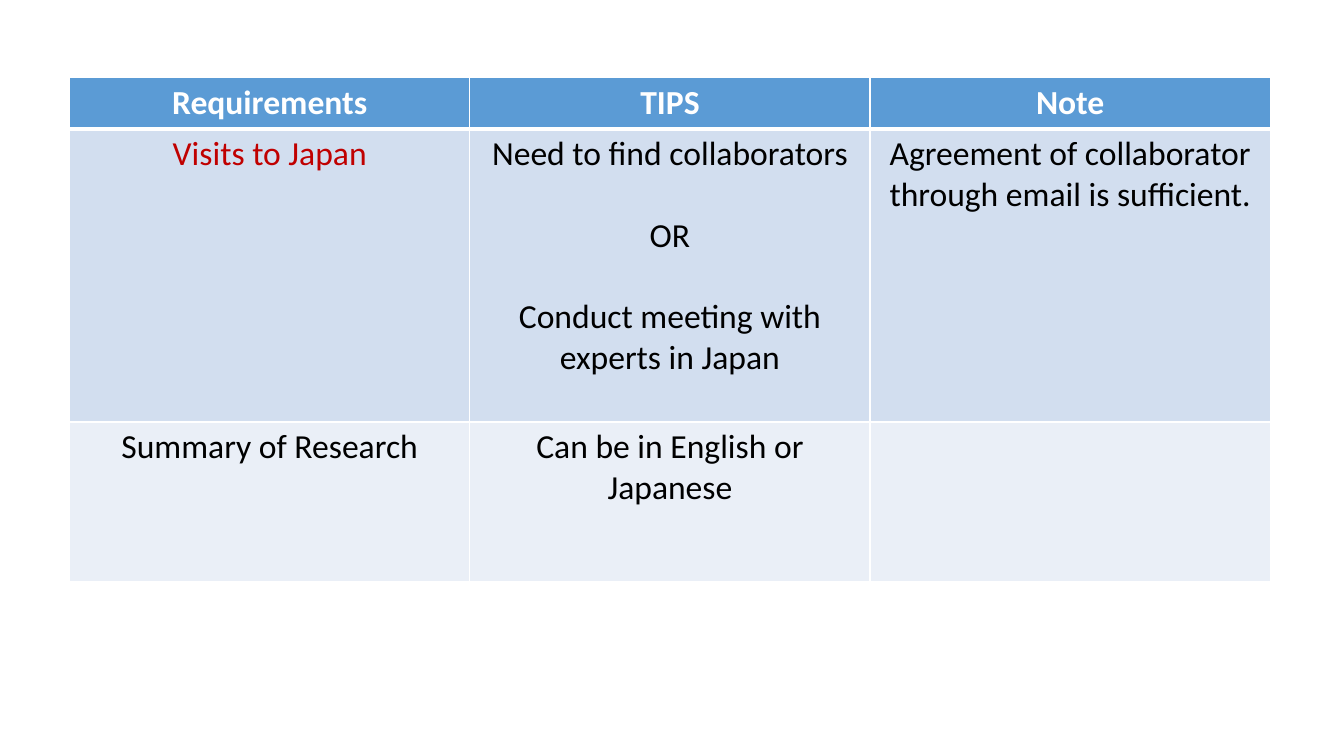
from dataclasses import dataclass

from lxml.etree import SubElement
from pptx import Presentation
from pptx.dml.color import RGBColor
from pptx.enum.text import PP_ALIGN
from pptx.oxml.ns import qn
from pptx.util import Inches, Pt


@dataclass(frozen=True)
class Theme:
    font: str = "Calibri"
    size: int = 24
    gap: int = 29
    head: str = "5B9BD5"
    bands: tuple = ("D2DEEF", "EAEFF7")
    white: str = "FFFFFF"
    black: str = "000000"
    red: str = "C00000"
    thin: int = 1
    thick: int = 3


THEME = Theme()


def write(frame, text, color=THEME.black, bold=False, gap=0):
    """Fill a frame with one centred paragraph per line of text."""
    for i, line in enumerate(text.split("\n")):
        para = frame.paragraphs[0] if i == 0 else frame.add_paragraph()
        para.alignment = PP_ALIGN.CENTER
        if i:
            para.space_before = Pt(gap)
        run = para.add_run()
        run.text = line
        font = run.font
        font.name, font.size, font.bold = THEME.font, Pt(THEME.size), bold
        font.color.rgb = RGBColor.from_string(color)


class Deck:
    def __init__(self, theme):
        self.theme = theme
        self.show = Presentation()
        self.show.slide_width = Inches(13.33)
        self.show.slide_height = Inches(7.5)
        self.slide = self.show.slides.add_slide(self.show.slide_layouts[6])

    def edge(self, cell, **sides):
        """Draw cell borders, each side given its width in points."""
        props = cell._tc.get_or_add_tcPr()
        for side, width in sides.items():
            line = SubElement(props, qn(f"a:ln{side}"), w=str(Pt(width)))
            fill = SubElement(line, qn("a:solidFill"))
            SubElement(fill, qn("a:srgbClr"), val=self.theme.white)

    def table(self, left, top, width, heights, rows, marks):
        """Add a banded table; marks maps a cell's text to its colour."""
        look = self.theme
        grid = self.slide.shapes.add_table(
            len(rows), len(rows[0]), Inches(left), Inches(top),
            Inches(width), Inches(sum(heights))).table
        for r, row in enumerate(rows):
            grid.rows[r].height = Inches(heights[r])
            head = r == 0
            band = look.head if head else look.bands[(r - 1) % 2]
            for c, text in enumerate(row):
                cell = grid.cell(r, c)
                self.edge(cell, L=look.thin, R=look.thin,
                          T=look.thick if r == 1 else look.thin,
                          B=look.thick if head else look.thin)
                cell.fill.solid()
                cell.fill.fore_color.rgb = RGBColor.from_string(band)
                if text:
                    color = look.white if head else marks.get(text, look.black)
                    write(cell.text_frame, text, color=color, bold=head,
                          gap=look.gap)

    def save(self):
        self.show.save("out.pptx")


def main():
    deck = Deck(THEME)

    # Requirements table
    rows = [
        ("Requirements", "TIPS", "Note"),
        ("Visits to Japan",
         "Need to find collaborators\nOR\nConduct meeting with experts in Japan",
         "Agreement of collaborator through email is sufficient."),
        ("Summary of Research", "Can be in English or Japanese", ""),
    ]
    deck.table(0.69, 0.77, 11.91, (0.49, 2.91, 1.58), rows,
               marks={"Visits to Japan": THEME.red})

    deck.save()


if __name__ == "__main__":
    main()
